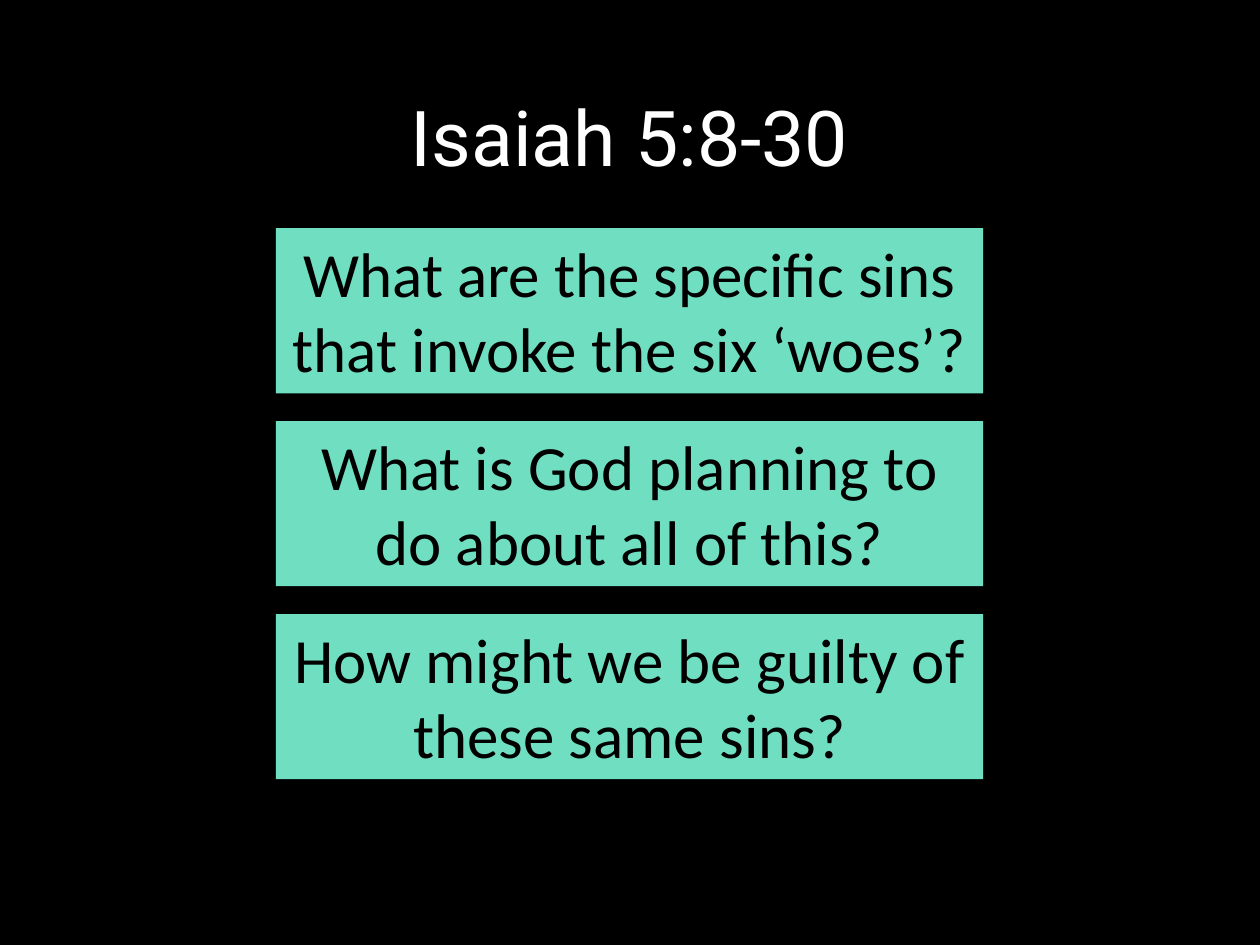
"""Build the Isaiah 5:8-30 discussion slide."""
import pptx
import pptx.util
import pptx.dml.color
import pptx.enum.text
from pptx.util import Cm

ANCHOR = pptx.enum.text.MSO_ANCHOR


def color(code):
    return pptx.dml.color.RGBColor.from_string(code)


def write(text, box, font="Calibri", size=36, ink="000000", fill=None,
          anchor=ANCHOR.TOP, line=None):
    shape = slide.shapes.add_textbox(*box)
    if fill:
        shape.fill.solid()
        shape.fill.fore_color.rgb = color(fill)
    frame = shape.text_frame
    frame.word_wrap = True
    frame.vertical_anchor = anchor
    para = frame.paragraphs[0]
    para.alignment = pptx.enum.text.PP_ALIGN.CENTER
    para.line_spacing = line
    run = para.add_run()
    run.text = text
    run.font.name = font
    run.font.size = pptx.util.Pt(size)
    run.font.color.rgb = color(ink)
    return shape


deck = pptx.Presentation()
deck.slide_width, deck.slide_height = Cm(25.4), Cm(19.05)
slide = deck.slides.add_slide(deck.slide_layouts[6])
slide.background.fill.solid()
slide.background.fill.fore_color.rgb = color("000000")

write("Isaiah 5:8-30", (Cm(1.75), Cm(1.02), Cm(21.9), Cm(3.68)),
      font="Roboto", size=44, ink="FFFFFF", anchor=ANCHOR.MIDDLE, line=0.9)

asks = [
    "What are the specific sins that invoke the six ‘woes’?",
    "What is God planning to do about all of this?",
    "How might we be guilty of these same sins?",
]
for row, ask in enumerate(asks):
    box = Cm(5.56), Cm(4.6 + 3.89 * row), Cm(14.26), Cm(3.33)
    card = write(ask, box, fill="70DEC1")
    card.text_frame.auto_size = pptx.enum.text.MSO_AUTO_SIZE.SHAPE_TO_FIT_TEXT

deck.save("out.pptx")
